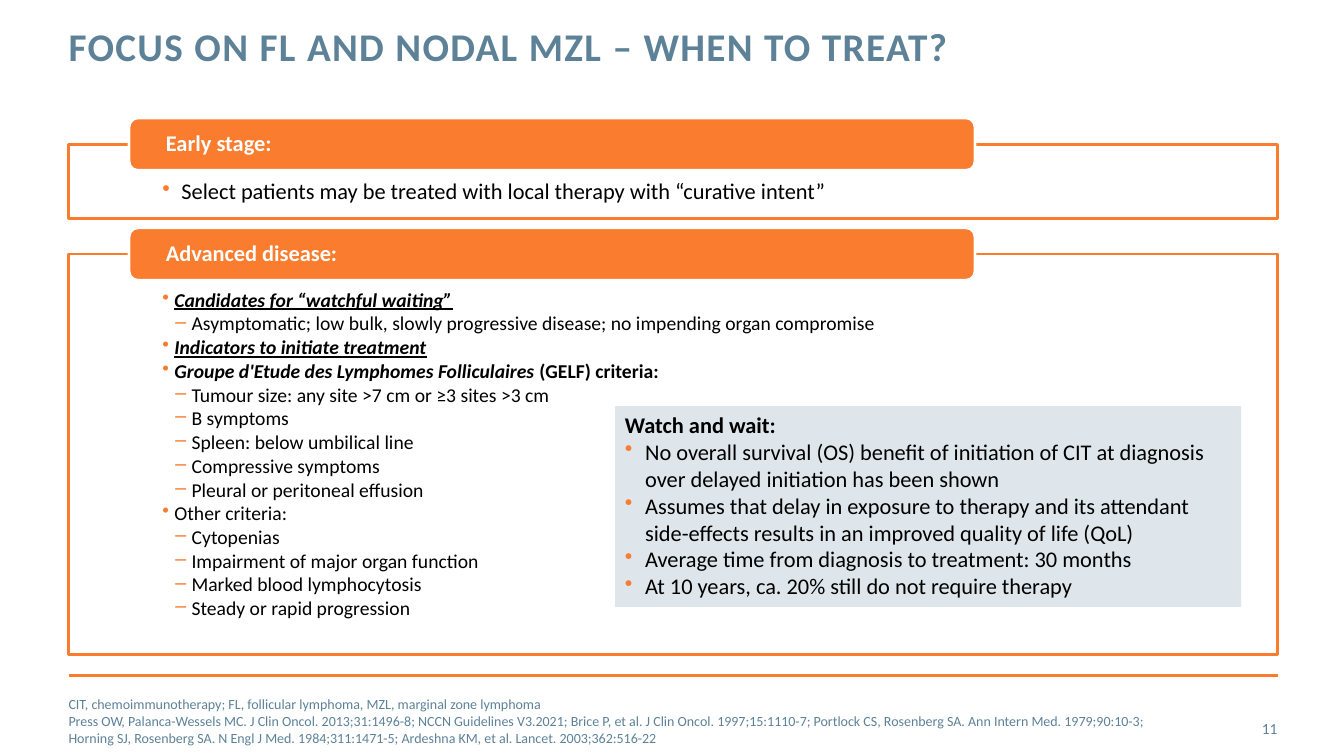
import pptx
import pptx.util
import pptx.dml.color
import pptx.enum.shapes
import pptx.enum.text
import pptx.oxml
import pptx.oxml.ns
from lxml import etree

PX = 9144
ORANGE = pptx.dml.color.RGBColor(0xFA, 0x7C, 0x2E)
SLATE = pptx.dml.color.RGBColor(0x5D, 0x82, 0x98)
PALE = pptx.dml.color.RGBColor(0xDE, 0xE6, 0xEB)
WHITE = pptx.dml.color.RGBColor(0xFF, 0xFF, 0xFF)
BLACK = pptx.dml.color.RGBColor(0, 0, 0)
SHAPE = pptx.enum.shapes.MSO_SHAPE
ANCHOR = pptx.enum.text.MSO_ANCHOR
ALIGN = pptx.enum.text.PP_ALIGN

presentation = pptx.Presentation()
presentation.slide_width = 1333 * PX
presentation.slide_height = 750 * PX
slide = presentation.slides.add_slide(presentation.slide_layouts[6])


def add_box(place, insets, anchor=ANCHOR.TOP, kind=None, fill=None, line=None):
    left, top, width, height = [value * PX for value in place]
    if kind is None:
        box = slide.shapes.add_textbox(left, top, width, height)
    else:
        box = slide.shapes.add_shape(kind, left, top, width, height)
        box.shadow.inherit = False
        box.fill.solid()
        box.fill.fore_color.rgb = fill
        if line is None:
            box.line.fill.background()
        else:
            box.line.color.rgb = line
            box.line.width = pptx.util.Pt(2)
    frame = box.text_frame
    frame.word_wrap = True
    frame.vertical_anchor = anchor
    frame.margin_left, frame.margin_top, frame.margin_right, frame.margin_bottom = [
        value * PX for value in insets]
    return frame


def add_text(frame, text, size, colour, bold=False, bullet=None, margin=0, hang=0,
             spacing=None, after=None):
    paragraph = frame.paragraphs[0]
    if paragraph.runs:
        paragraph = frame.add_paragraph()
    paragraph.text = text
    paragraph.alignment = ALIGN.LEFT
    paragraph.line_spacing = spacing
    if after is not None:
        paragraph.space_after = pptx.util.Pt(after)
    if bullet:
        properties = paragraph._p.get_or_add_pPr()
        properties.set("marL", str(margin * PX))
        properties.set("indent", str(-hang * PX))
        bullet_colour = etree.SubElement(properties, pptx.oxml.ns.qn("a:buClr"))
        etree.SubElement(bullet_colour, pptx.oxml.ns.qn("a:srgbClr")).set("val", str(ORANGE))
        etree.SubElement(properties, pptx.oxml.ns.qn("a:buChar")).set("char", bullet)
    paragraph.font.name = "Calibri"
    paragraph.font.size = pptx.util.Pt(size)
    paragraph.font.color.rgb = colour
    paragraph.font.bold = bold
    return paragraph


divider = slide.shapes.add_connector(
    pptx.enum.shapes.MSO_CONNECTOR.STRAIGHT, 68 * PX, 670 * PX, 1268 * PX, 670 * PX)
divider.line.color.rgb = ORANGE
divider.line.width = pptx.util.Pt(2)
etree.SubElement(divider._element.spPr, pptx.oxml.ns.qn("a:effectLst"))

stages = []
for heading, top, height in [("Early stage:", 143, 74), ("Advanced disease:", 252, 397)]:
    stages.append(add_box((68, top, 1199, height), (93, 36, 93, 11),
                          kind=SHAPE.RECTANGLE, fill=WHITE, line=ORANGE))
    banner = add_box((128, top - 26, 839, 52), (34, 0, 34, 0), ANCHOR.MIDDLE,
                     SHAPE.ROUNDED_RECTANGLE, ORANGE, WHITE)
    add_text(banner, heading, 16, WHITE, bold=True, spacing=0.9)
early_stage, advanced_disease = stages

add_text(early_stage, "Select patients may be treated with local therapy with “curative intent”",
         16, BLACK, bullet="•", margin=19, hang=19, spacing=0.9)

criteria = [
    ("Candidates for “watchful waiting”", True,
     ["Asymptomatic; low bulk, slowly progressive disease; no impending organ compromise"]),
    ("Indicators to initiate treatment", True, []),
    ("Groupe d'Etude des Lymphomes Folliculaires ", False,
     ["Tumour size: any site >7 cm or ≥3 sites >3 cm", "B symptoms",
      "Spleen: below umbilical line", "Compressive symptoms",
      "Pleural or peritoneal effusion"]),
    ("Other criteria:", False,
     ["Cytopenias", "Impairment of major organ function", "Marked blood lymphocytosis",
      "Steady or rapid progression"]),
]
for topic, underlined, details in criteria:
    is_gelf = topic.startswith("Groupe")
    line = add_text(advanced_disease, topic, 14, BLACK, bold=underlined or is_gelf,
                    bullet="•", margin=12, hang=12, spacing=0.9, after=1.8)
    if underlined:
        line.font.italic = True
        line.font.underline = True
    if is_gelf:
        line.runs[0].font.italic = True
        line.add_run().text = "(GELF) criteria:"
    for detail in details:
        add_text(advanced_disease, detail, 14, BLACK, bullet="–", margin=29, hang=16,
                 spacing=0.9, after=1.8)

title = add_box((68, 27, 956, 88), (0, 0, 0, 0))
title_line = add_text(title, "FOCUS ON FL AND NODAL MZL – WHEN TO TREAT?", 28, SLATE,
                      bold=True, spacing=pptx.util.Pt(30))
title_line.runs[0]._r.get_or_add_rPr().set("spc", "100")

references = add_box((68, 695, 1085, 40), (0, 0, 0, 0), ANCHOR.MIDDLE)
for reference in [
    "CIT, chemoimmunotherapy; FL, follicular lymphoma, MZL, marginal zone lymphoma",
    "Press OW, Palanca-Wessels MC. J Clin Oncol. 2013;31:1496-8; NCCN Guidelines V3.2021; "
    "Brice P, et al. J Clin Oncol. 1997;15:1110-7; Portlock CS, Rosenberg SA. "
    "Ann Intern Med. 1979;90:10-3; Horning SJ, Rosenberg SA. N Engl J Med. "
    "1984;311:1471-5; Ardeshna KM, et al. Lancet. 2003;362:516-22",
]:
    add_text(references, reference, 10, SLATE)

watch_and_wait = add_box((610, 403, 621, 199), (10, 5, 10, 5), kind=SHAPE.RECTANGLE, fill=PALE)
add_text(watch_and_wait, "Watch and wait:", 16, BLACK, bold=True)
for finding in [
    "No overall survival (OS) benefit of initiation of CIT at diagnosis over delayed "
    "initiation has been shown",
    "Assumes that delay in exposure to therapy and its attendant side-effects results in "
    "an improved quality of life (QoL)",
    "Average time from diagnosis to treatment: 30 months",
    "At 10 years, ca. 20% still do not require therapy",
]:
    add_text(watch_and_wait, finding, 16, BLACK, bullet="•", margin=20, hang=20)

page_number = add_box((1181, 703, 86, 40), (0, 0, 0, 0), ANCHOR.MIDDLE)
add_text(page_number, "11", 11, SLATE).alignment = ALIGN.RIGHT

presentation.save("out.pptx")
